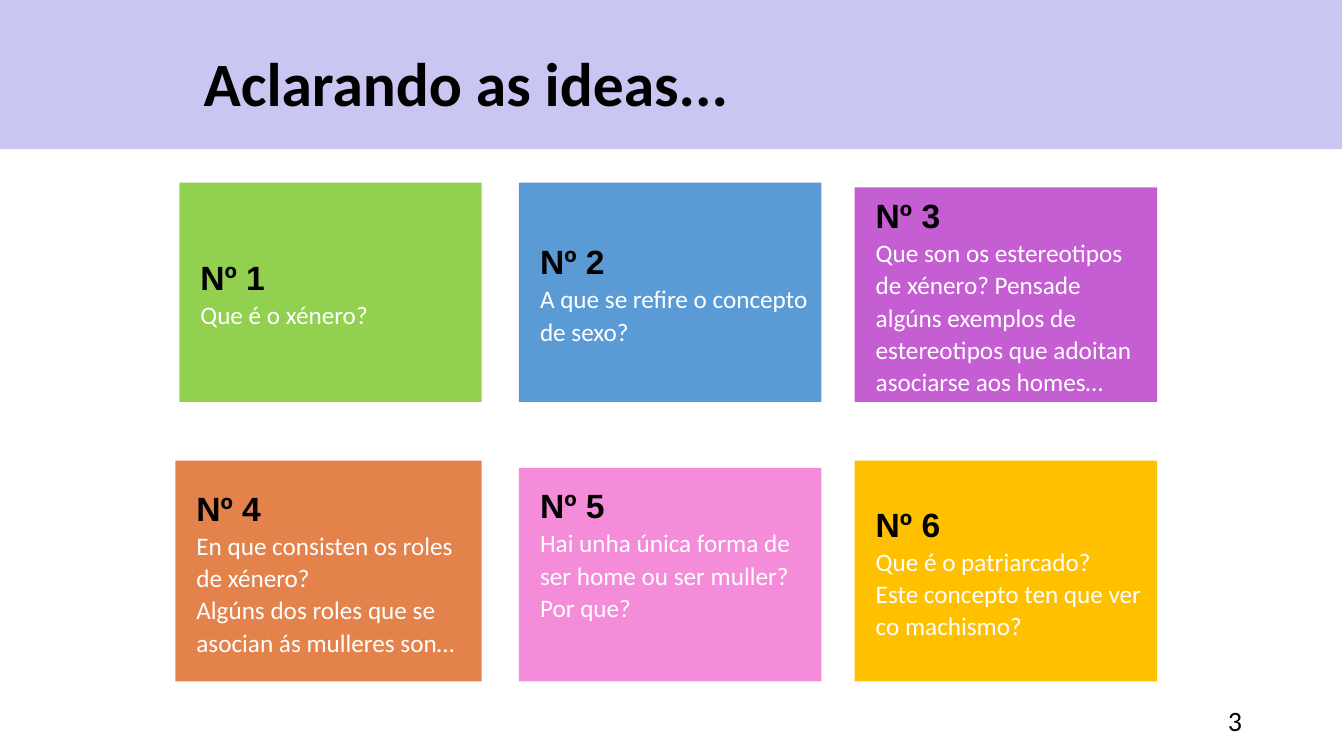
from pptx import Presentation
from pptx.dml.color import RGBColor
from pptx.enum.shapes import MSO_SHAPE
from pptx.enum.text import MSO_ANCHOR, PP_ALIGN
from pptx.util import Cm, Pt

BLACK, WHITE = "000000", "FFFFFF"
CARD_WIDTH = 7.62
COLUMN_RIGHTS = (12.14, 20.7, 29.16)
ROW_BOTTOMS = (10.13, 17.17)

# Number, colour, top, extra width, extra space below the text, paragraphs
CARDS = [
    (1, "92D050", 4.6, 0, 0, ["Que é o xénero?"]),
    (2, "5B9BD5", 4.6, 0, 0, ["A que se refire o concepto de sexo?"]),
    (3, "C55DD3", 4.72, 0, 0, [
        "Que son os estereotipos de xénero? Pensade algúns exemplos de "
        "estereotipos que adoitan asociarse aos homes…"]),
    (4, "E4824C", 11.61, 0.1, 0, [
        "En que consisten os roles de xénero?",
        "Algúns dos roles que se asocian ás mulleres son…"]),
    (5, "F48CD9", 11.79, 0, 1.11, [
        "Hai unha única forma de ser home ou ser muller? Por que?"]),
    (6, "FFC000", 11.61, 0, 0, [
        "Que é o patriarcado?",
        "Este concepto ten que ver co machismo?"]),
]


def color(value):
    return RGBColor.from_string(value)


class SlideBuilder:
    def __init__(self, slide, heading_font="Arial", body_font="Calibri"):
        self.slide = slide
        self.heading_font = heading_font
        self.body_font = body_font

    def rectangle(self, left, top, width, height, fill):
        shape = self.slide.shapes.add_shape(
            MSO_SHAPE.RECTANGLE, Cm(left), Cm(top), Cm(width), Cm(height))
        shape.shadow.inherit = False
        shape.fill.solid()
        shape.fill.fore_color.rgb = color(fill)
        shape.line.fill.background()
        return shape

    def run(self, paragraph, text, font, size, text_color, bold=False):
        run = paragraph.add_run()
        run.text = text
        run.font.name = font
        run.font.size = Pt(size)
        run.font.bold = bold
        run.font.color.rgb = color(text_color)

    def text(self, left, top, width, height, text, size, bold=False,
             align=PP_ALIGN.LEFT, anchor=MSO_ANCHOR.TOP):
        shape = self.slide.shapes.add_textbox(
            Cm(left), Cm(top), Cm(width), Cm(height))
        frame = shape.text_frame
        frame.word_wrap = True
        frame.vertical_anchor = anchor
        paragraph = frame.paragraphs[0]
        paragraph.alignment = align
        self.run(paragraph, text, self.body_font, size, BLACK, bold)

    def card(self, left, top, width, height, fill, heading, lines, space_below):
        frame = self.rectangle(left, top, width, height, fill).text_frame
        frame.word_wrap = True
        frame.vertical_anchor = MSO_ANCHOR.MIDDLE
        frame.margin_bottom = Cm(0.13 + space_below)
        self.run(frame.paragraphs[0], heading, self.heading_font, 24, BLACK, True)
        for line in lines:
            self.run(frame.add_paragraph(), line, self.body_font, 18, WHITE)
        for paragraph in frame.paragraphs:
            paragraph.alignment = PP_ALIGN.LEFT
            paragraph.line_spacing = 1.07
            paragraph.space_after = Pt(0)
            properties = paragraph._p.get_or_add_pPr()
            properties.set("marL", str(Cm(0.28)))
            properties.set("indent", "0")
        frame.paragraphs[-1].space_after = Pt(8)


def main():
    presentation = Presentation()
    presentation.slide_width = Cm(33.87)
    presentation.slide_height = Cm(19.05)
    slide = presentation.slides.add_slide(presentation.slide_layouts[6])
    builder = SlideBuilder(slide)

    # Title band
    builder.rectangle(-0.05, -0.13, 33.87, 3.89, "CAC6F2")
    builder.text(4.88, 1.02, 23.06, 2.4, "Aclarando as ideas...", 44, bold=True)

    # Question cards, three to a row
    for index, (number, fill, top, extra, space_below, lines) in enumerate(CARDS):
        row, column = divmod(index, len(COLUMN_RIGHTS))
        width = CARD_WIDTH + extra
        builder.card(COLUMN_RIGHTS[column] - width, top, width,
                     ROW_BOTTOMS[row] - top, fill, f"Nº {number}",
                     lines, space_below)

    # Page number
    builder.text(23.93, 17.65, 7.62, 1.02, "3", 20,
                 align=PP_ALIGN.RIGHT, anchor=MSO_ANCHOR.MIDDLE)

    presentation.save("out.pptx")


if __name__ == "__main__":
    main()
